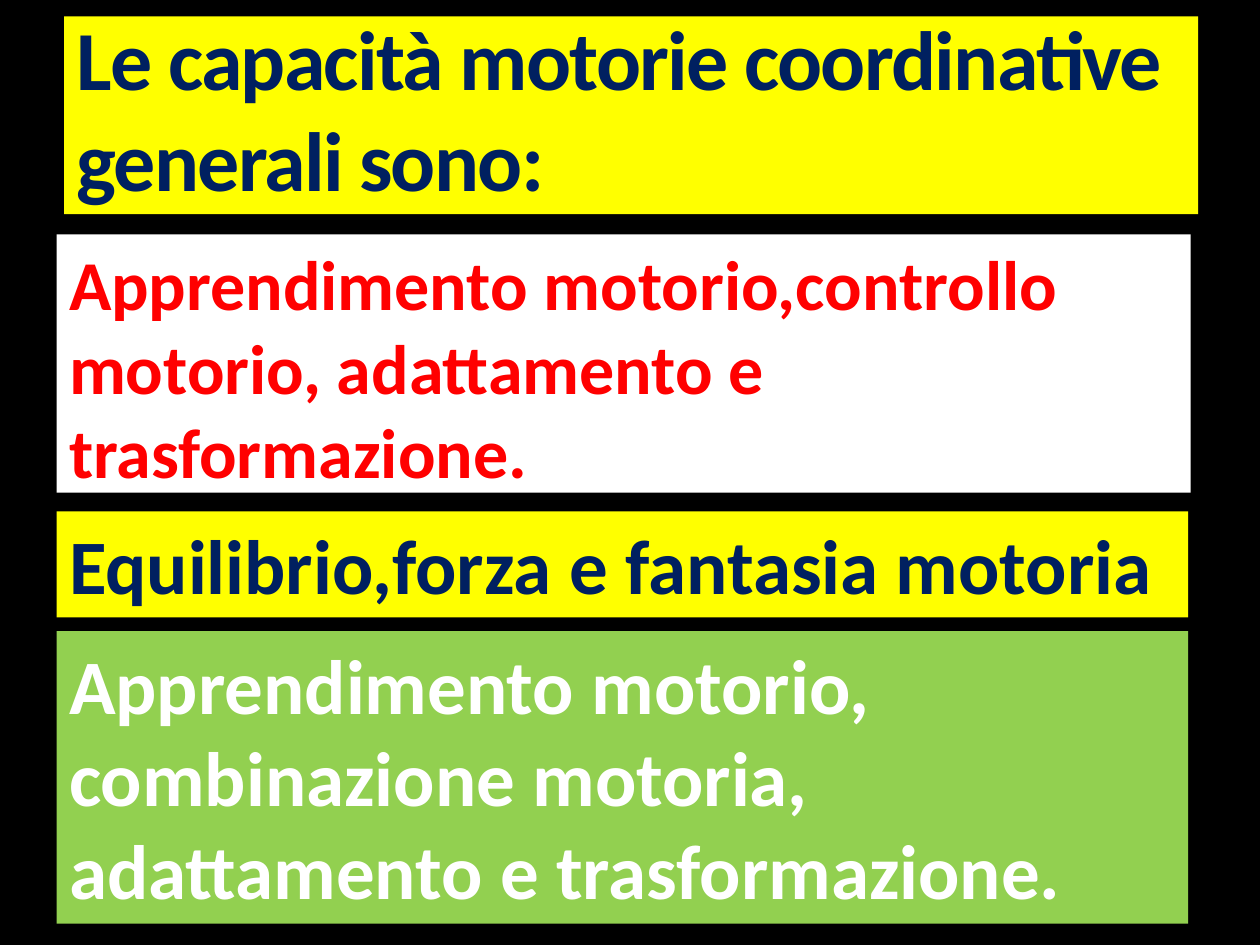
from lxml import etree
from pptx import Presentation
from pptx.dml.color import RGBColor
from pptx.enum.shapes import MSO_SHAPE
from pptx.enum.text import MSO_ANCHOR, PP_ALIGN
from pptx.oxml.ns import qn
from pptx.util import Inches, Pt

BLACK = RGBColor(0x00, 0x00, 0x00)
WHITE = RGBColor(0xFF, 0xFF, 0xFF)
YELLOW = RGBColor(0xFF, 0xFF, 0x00)
GREEN = RGBColor(0x92, 0xD0, 0x50)
RED = RGBColor(0xFF, 0x00, 0x00)
NAVY = RGBColor(0x00, 0x20, 0x60)
OUTLINE = RGBColor(0x1B, 0x40, 0x6E)

COLUMN = 0.45


class Board:
    font_name = "Calibri"

    def __init__(self, presentation):
        layout = presentation.slide_layouts[6]
        self.slide = presentation.slides.add_slide(layout)
        fill = self.slide.background.fill
        fill.solid()
        fill.fore_color.rgb = BLACK

    def panel(self, text, box, fill, color, size, anchor=MSO_ANCHOR.TOP, before=0):
        shape = self.slide.shapes.add_shape(
            MSO_SHAPE.RECTANGLE, *(Inches(length) for length in box))
        shape.shadow.inherit = False
        shape.fill.solid()
        shape.fill.fore_color.rgb = fill
        shape.line.fill.background()
        text_frame = shape.text_frame
        text_frame.word_wrap = True
        text_frame.vertical_anchor = anchor
        text_frame.text = text
        paragraph = text_frame.paragraphs[0]
        paragraph.alignment = PP_ALIGN.LEFT
        paragraph.space_before = Pt(before)
        run = paragraph.runs[0]
        run.font.name = self.font_name
        run.font.size = Pt(size)
        run.font.bold = True
        run.font.color.rgb = color
        return run

    def title(self, text, box, fill, color, size):
        run = self.panel(text, box, fill, color, size, MSO_ANCHOR.BOTTOM)
        properties = run.font._element
        properties.set("spc", "-100")
        line = etree.Element(qn("a:ln"), w=str(Pt(0.25)))
        solid = etree.SubElement(line, qn("a:solidFill"))
        tint = etree.SubElement(solid, qn("a:srgbClr"), val=str(OUTLINE))
        etree.SubElement(tint, qn("a:alpha"), val="25000")
        properties.insert(0, line)


presentation = Presentation()
presentation.slide_width = Inches(10)
presentation.slide_height = Inches(7.5)

board = Board(presentation)
board.panel("Apprendimento motorio,controllo motorio, adattamento e trasformazione.",
            (COLUMN, 1.86, 9, 2.05), WHITE, RED, 40, before=6)
board.title("Le capacità motorie coordinative generali sono:",
            (0.51, 0.13, 9, 1.57), YELLOW, NAVY, 48)
board.panel("Equilibrio,forza e fantasia motoria",
            (COLUMN, 4.06, 8.98, 0.84), YELLOW, NAVY, 44)
board.panel("Apprendimento motorio, combinazione motoria, adattamento e trasformazione.",
            (COLUMN, 5.01, 8.98, 2.32), GREEN, WHITE, 44)

presentation.save("out.pptx")
